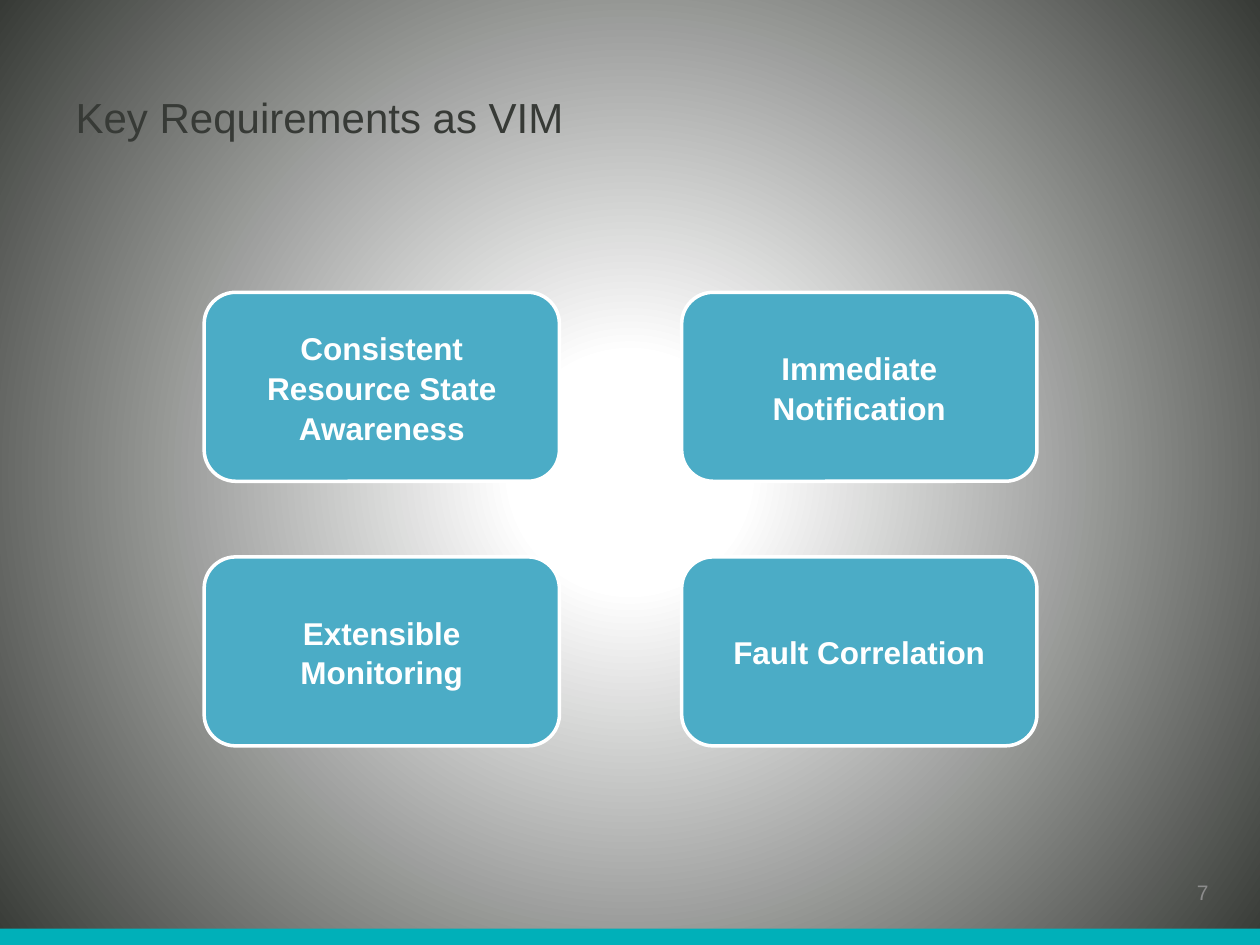
from lxml import etree
from pptx import Presentation
from pptx.dml.color import RGBColor
from pptx.enum.shapes import MSO_SHAPE
from pptx.enum.text import MSO_ANCHOR, PP_ALIGN
from pptx.oxml.ns import qn
from pptx.util import Inches, Pt

RECTANGLE, ROUNDED = MSO_SHAPE.RECTANGLE, MSO_SHAPE.ROUNDED_RECTANGLE
MIDDLE, BOTTOM = MSO_ANCHOR.MIDDLE, MSO_ANCHOR.BOTTOM
LEFT, CENTER, RIGHT = PP_ALIGN.LEFT, PP_ALIGN.CENTER, PP_ALIGN.RIGHT

WHITE = RGBColor(0xFF, 0xFF, 0xFF)
CHARCOAL = RGBColor(0x37, 0x3A, 0x36)
TURQUOISE = RGBColor(0x00, 0xB0, 0xB9)
BLUE = RGBColor(0x4B, 0xAC, 0xC6)
GRAY = RGBColor(0x8C, 0x8C, 0x8C)

REQUIREMENTS = [
    ["Consistent Resource State Awareness", "Immediate Notification"],
    ["Extensible Monitoring", "Fault Correlation"],
]


class SlideBuilder:
    """Holds the text styles and the slide being built."""

    FONTS = {
        "title": {"size": Pt(24), "bold": False, "color": CHARCOAL},
        "number": {"size": Pt(12), "bold": False, "color": GRAY},
        "card": {"size": Pt(18), "bold": True, "color": WHITE},
    }

    def __init__(self, slide):
        self.slide = slide

    def background(self, center_color, edge_color):
        fill = self.slide.background.fill
        fill.gradient()
        stops = zip(fill.gradient_stops, (0.15, 1), (center_color, edge_color))
        for stop, position, color in stops:
            stop.position = position
            stop.color.rgb = color
        linear = self.slide.element.find(".//" + qn("a:lin"))
        radial = etree.Element(qn("a:path"), {"path": "circle"})
        middle = dict.fromkeys("ltrb", "50000")
        etree.SubElement(radial, qn("a:fillToRect"), middle)
        linear.getparent().replace(linear, radial)

    def set_text(self, shape, text, style, alignment, anchor):
        frame = shape.text_frame
        frame.word_wrap = True
        frame.vertical_anchor = anchor
        frame.text = text
        paragraph = frame.paragraphs[0]
        paragraph.alignment = alignment
        font = paragraph.runs[0].font
        font.name = "Arial"
        for name, value in self.FONTS[style].items():
            if name == "color":
                font.color.rgb = value
            else:
                setattr(font, name, value)
        return paragraph

    def title(self, text, left, top, width, height):
        shape = self.slide.shapes.title
        box = {"left": left, "top": top, "width": width, "height": height}
        for name, value in box.items():
            setattr(shape, name, Inches(value))
        self.set_text(shape, text, "title", LEFT, MIDDLE)

    def slide_number(self, text, *box):
        shape = self.slide.shapes.add_textbox(*map(Inches, box))
        self.set_text(shape, text, "number", RIGHT, BOTTOM)

    def block(self, kind, color, *box):
        shape = self.slide.shapes.add_shape(kind, *map(Inches, box))
        shape.shadow.inherit = False
        shape.fill.solid()
        shape.fill.fore_color.rgb = color
        shape.line.fill.background()
        return shape

    def card(self, text, *box):
        shape = self.block(ROUNDED, BLUE, *box)
        shape.line.color.rgb = WHITE
        shape.line.width = Pt(2)
        shape.text_frame.margin_left = Inches(0.2)
        shape.text_frame.margin_right = Inches(0.2)
        paragraph = self.set_text(shape, text, "card", CENTER, MIDDLE)
        paragraph.line_spacing = 1.05


def main():
    presentation = Presentation()
    presentation.slide_width = Inches(10)
    presentation.slide_height = Inches(7.5)
    title_only = presentation.slide_layouts[5]
    builder = SlideBuilder(presentation.slides.add_slide(title_only))

    builder.background(WHITE, CHARCOAL)
    builder.block(RECTANGLE, TURQUOISE, 0, 7.37, 10.03, 0.17)
    builder.slide_number("7", 9.03, 6.7, 0.66, 0.53)
    builder.title("Key Requirements as VIM", 0.5, 0.3, 9, 1.25)
    for row, requirements in enumerate(REQUIREMENTS):
        for column, text in enumerate(requirements):
            left, top = 1.62 + 3.79 * column, 2.32 + 2.1 * row
            builder.card(text, left, top, 2.82, 1.5)

    presentation.save("out.pptx")


if __name__ == "__main__":
    main()
